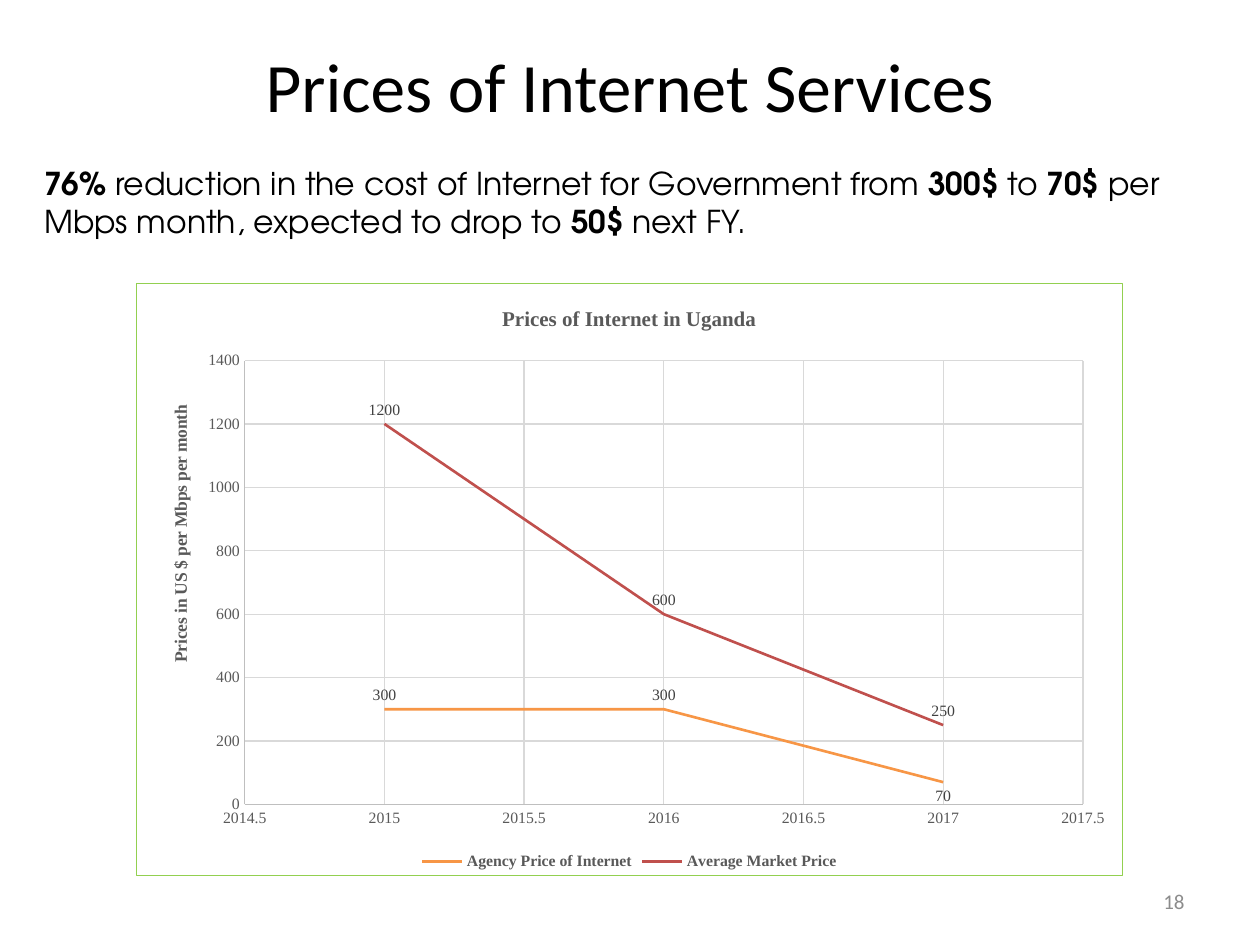
from lxml import etree
from pptx import Presentation
from pptx.chart.data import XyChartData
from pptx.dml.color import RGBColor
from pptx.enum.chart import (XL_CHART_TYPE, XL_LABEL_POSITION,
                             XL_LEGEND_POSITION, XL_TICK_MARK)
from pptx.enum.text import MSO_ANCHOR, MSO_AUTO_SIZE, PP_ALIGN
from pptx.oxml import parse_xml
from pptx.oxml.ns import nsdecls, qn
from pptx.util import Inches, Pt

SCATTER = XL_CHART_TYPE.XY_SCATTER_LINES_NO_MARKERS
ABOVE, BELOW = XL_LABEL_POSITION.ABOVE, XL_LABEL_POSITION.BELOW
LEGEND_BOTTOM = XL_LEGEND_POSITION.BOTTOM
NO_TICK = XL_TICK_MARK.NONE
CENTER, LEFT, RIGHT = PP_ALIGN.CENTER, PP_ALIGN.LEFT, PP_ALIGN.RIGHT
MIDDLE, TOP = MSO_ANCHOR.MIDDLE, MSO_ANCHOR.TOP
NO_FIT = MSO_AUTO_SIZE.NONE


def rgb(color):
    return RGBColor.from_string(color)


class SlideBuilder:
    HEAD, BODY, CHART = "Calibri", "TeX Gyre Adventor", "Times New Roman"
    BLACK, GREY, LABEL, NUMBER = "000000", "595959", "404040", "8C8C8C"
    AXIS, GRID, BORDER = "BFBFBF", "D9D9D9", "92D050"

    def __init__(self, slide):
        self.s = slide

    def font(self, font, name, size, color, bold=False):
        font.name, font.size, font.bold = name, Pt(size), bold
        font.color.rgb = rgb(color)

    def line(self, line, color, width):
        line.color.rgb, line.width = rgb(color), Pt(width)

    def place(self, sp, box, align, anchor):
        sp.left, sp.top, sp.width, sp.height = map(Inches, box)
        tf = sp.text_frame
        tf.word_wrap, tf.auto_size, tf.vertical_anchor = True, NO_FIT, anchor
        p = tf.paragraphs[0]
        p.alignment = align
        return p

    def title(self, text, box):
        p = self.place(self.s.shapes.title, box, CENTER, MIDDLE)
        p.text = text
        self.font(p.runs[0].font, self.HEAD, 39.6, self.BLACK)

    def body(self, runs, box):
        p = self.place(self.s.placeholders[1], box, LEFT, TOP)
        p.space_before = Pt(0)
        pPr = p._p.get_or_add_pPr()
        pPr.set("marL", "0")
        pPr.set("indent", "0")
        etree.SubElement(pPr, qn("a:buNone"))
        for text, bold in runs:
            r = p.add_run()
            r.text = text
            self.font(r.font, self.BODY, 18, self.BLACK, bold)

    def page_number(self, text, box):
        sp = self.s.shapes.add_textbox(*map(Inches, box))
        p = self.place(sp, box, RIGHT, MIDDLE)
        p.text = text
        self.font(p.runs[0].font, self.HEAD, 12, self.NUMBER)

    def chart_heading(self, heading, text, size):
        p = heading.text_frame.paragraphs[0]
        p.text = text
        self.font(p.runs[0].font, self.CHART, size, self.GREY, True)

    def axis(self, axis, low, high, step):
        axis.minimum_scale, axis.maximum_scale, axis.major_unit = low, high, step
        axis.major_tick_mark = axis.minor_tick_mark = NO_TICK
        axis.has_major_gridlines = True
        self.line(axis.major_gridlines.format.line, self.GRID, 0.75)
        self.line(axis.format.line, self.AXIS, 0.75)
        self.font(axis.tick_labels.font, self.CHART, 9, self.GREY)

    def layout(self, parent, index, fractions, target=""):
        """Fix a chart part's place as fractions of the chart."""
        for old in parent.findall(qn("c:layout")):
            parent.remove(old)
        places = "".join(f'<c:{k} val="{v}"/>' for k, v in zip("xywh", fractions))
        parent.insert(index, parse_xml(
            f'<c:layout {nsdecls("c")}><c:manualLayout>{target}'
            f'<c:xMode val="edge"/><c:yMode val="edge"/>{places}'
            '</c:manualLayout></c:layout>'))

    def chart_frame(self, chart):
        chart._chartSpace.find(qn("c:chart")).addnext(parse_xml(
            f'<c:spPr {nsdecls("c", "a")}><a:solidFill><a:srgbClr val="FFFFFF"/>'
            f'</a:solidFill><a:ln w="3175"><a:solidFill><a:srgbClr val="{self.BORDER}"/>'
            '</a:solidFill></a:ln></c:spPr>'))
        self.layout(chart._chartSpace.chart.plotArea, 0, (0.11, 0.13, 0.85, 0.75),
                    '<c:layoutTarget val="inner"/>')

    def scatter(self, title, y_title, years, prices, x_scale, y_scale, box):
        data = XyChartData()
        for name, values, _, _ in prices:
            series = data.add_series(name)
            for x, y in zip(years, values):
                series.add_data_point(x, y)
        chart = self.s.shapes.add_chart(SCATTER, *map(Inches, box), data).chart
        self.font(chart.font, self.CHART, 10, self.BLACK)
        self.chart_frame(chart)

        # Titles and axes
        chart.has_title = True
        self.chart_heading(chart.chart_title, title, 12)
        self.axis(chart.category_axis, *x_scale)
        self.axis(chart.value_axis, *y_scale)
        axis_title = chart.value_axis.axis_title
        self.chart_heading(axis_title, y_title, 10)
        self.layout(axis_title._element, 1, (0.03, 0.2))

        # Legend
        chart.has_legend = True
        chart.legend.position = LEGEND_BOTTOM
        chart.legend.include_in_layout = False
        self.font(chart.legend.font, self.CHART, 9, self.GREY, True)

        # Lines and value labels
        plot = chart.plots[0]
        plot.vary_by_categories = False
        for series, (_, _, color, positions) in zip(plot.series, prices):
            self.line(series.format.line, color, 1.5)
            for i, position in enumerate(positions):
                label = series.points[i].data_label
                self.font(label.font, self.CHART, 9, self.LABEL)
                label.position = position


def main():
    prs = Presentation()
    prs.slide_width, prs.slide_height = Inches(10), Inches(7.5)
    b = SlideBuilder(prs.slides.add_slide(prs.slide_layouts[1]))

    # Title and message
    b.title("Prices of Internet Services", (0.5, 0.3, 9, 0.75))
    b.body([("76% ", True),
            ("reduction in the cost of Internet for Government from ", False),
            ("300$", True), (" to ", False), ("70$ ", True),
            ("per Mbps month, expected to drop to ", False),
            ("50$", True), (" next FY.", False)], (0.25, 1.25, 9.58, 0.71))

    # Price chart
    b.scatter("Prices of Internet in Uganda", "Prices in US $ per Mbps per month",
              (2017, 2016, 2015),
              [("Agency Price of Internet", (70, 300, 300), "F79646",
                (BELOW, ABOVE, ABOVE)),
               ("Average Market Price", (250, 600, 1200), "C0504D", (ABOVE,) * 3)],
              (2014.5, 2017.5, 0.5), (0, 1400, 200), (1.08, 2.25, 7.83, 4.7))

    # Page number
    b.page_number("18", (7.17, 6.95, 2.33, 0.4))
    prs.save("out.pptx")


if __name__ == "__main__":
    main()
